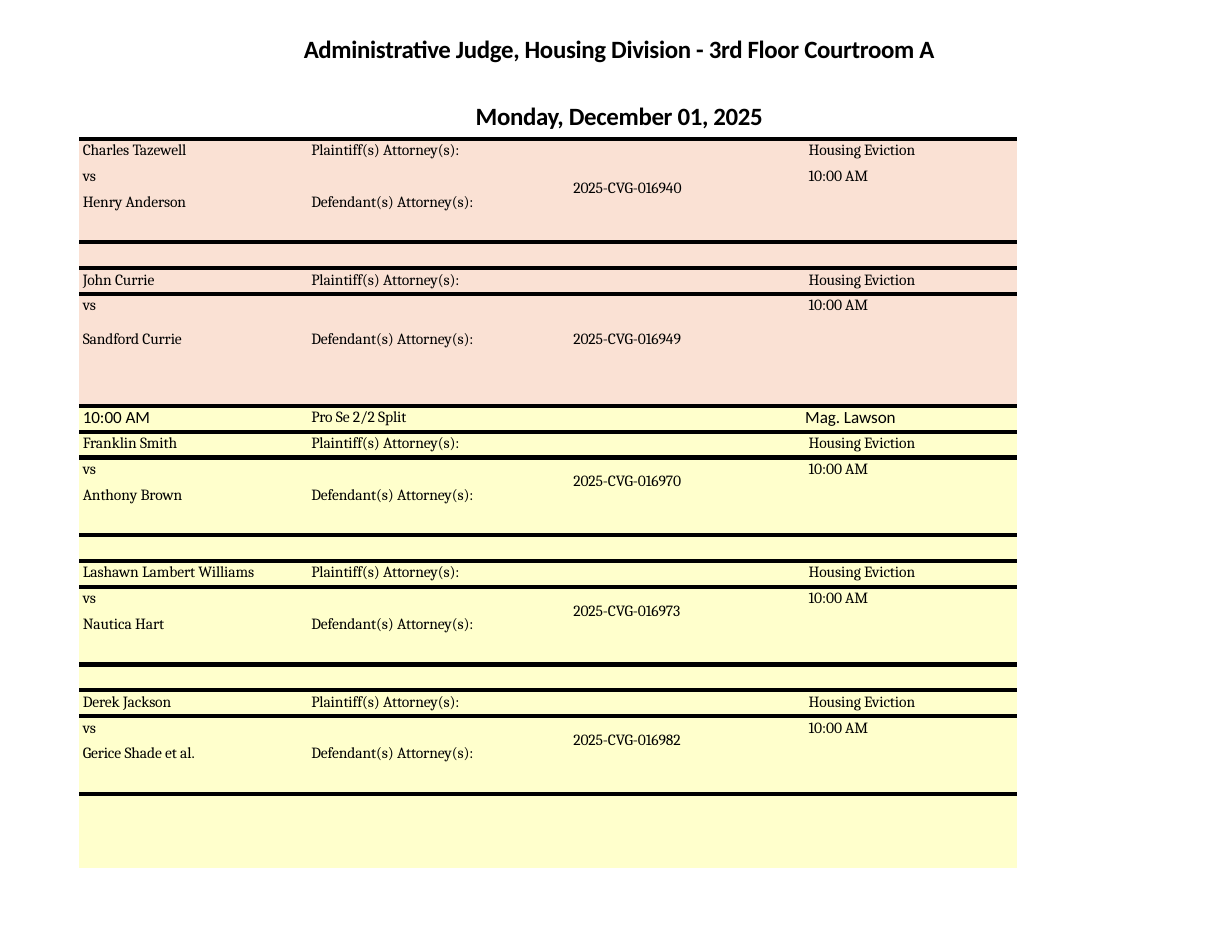
"""Build a one-page housing court docket with a heading and a case table."""
import pptx
import pptx.dml.color
import pptx.enum.text
import pptx.oxml.ns
import pptx.util
import lxml.etree

Pt = pptx.util.Pt
COLORS = {"ink": "000000", "morning": "FAE1D4", "pro se": "FFFFCC"}
HEADING = [("Administrative Judge, Housing Division - 3rd Floor Courtroom A", 0.9),
           ("Monday, December 01, 2025", 24)]
SESSION = ["10:00 AM", "Pro Se 2/2 Split", "", "Mag. Lawson"]
CASES = [
    ("morning", "Charles Tazewell", "Henry Anderson", "2025-CVG-016940", "spacer"),
    ("morning", "John Currie", "Sandford Currie", "2025-CVG-016949", "session"),
    ("pro se", "Franklin Smith", "Anthony Brown", "2025-CVG-016970", "spacer"),
    ("pro se", "Lashawn Lambert Williams", "Nautica Hart", "2025-CVG-016973", "spacer"),
    ("pro se", "Derek Jackson", "Gerice Shade et al.", "2025-CVG-016982", "footer"),
]
COLUMN_WIDTHS = [136.3, 154, 144.7, 167.6]
INDENTS = [2.2, 12.8, 27.3, 33.9]
LINE = 16.65
HEIGHTS = {"party": LINE, "versus": LINE, "defendant": 2 * LINE, "tall": 3 * LINE,
           "spacer": LINE, "session": LINE, "footer": 47.5}
RULES = {"opening": "T", "party": "TB", "versus": "", "defendant": "B", "tall": "B",
         "spacer": "TB", "session": "TB", "footer": ""}
HEIGHTS["opening"] = LINE
NO_GRID_STYLE = "{2D5ABB26-0587-4C30-8999-92F81FD0307C}"


def docket_rows():
    """Return (kind, fill name, texts) for each row of the table."""
    rows = []
    for fill, plaintiff, defendant, number, ending in CASES:
        tall = ending == "session"
        rows.append(("party" if rows else "opening", fill,
                     [plaintiff, "Plaintiff(s) Attorney(s):", "", "Housing Eviction"]))
        rows.append(("versus", fill, ["vs", "", "" if tall else number, "10:00 AM"]))
        rows.append(("tall" if tall else "defendant", fill,
                     [defendant, "Defendant(s) Attorney(s):", number if tall else "", ""]))
        rows.append((ending, "pro se" if tall else fill, SESSION if tall else [""] * 4))
    return rows


def color(name):
    return pptx.dml.color.RGBColor.from_string(COLORS[name])


def add_child(parent, tag, **attributes):
    return lxml.etree.SubElement(parent, pptx.oxml.ns.qn(tag), attributes)


def style_paragraph(paragraph, font_name, size, space_before, spacing, bold=False):
    font = paragraph.font
    font.name, font.size, font.bold = font_name, Pt(size), bold
    font.color.rgb = color("ink")
    font._rPr.set("spc", str(spacing))
    paragraph.space_before = Pt(space_before)


def add_heading(slide):
    box = slide.shapes.add_textbox(Pt(190.8), Pt(20.9), Pt(414.7), Pt(64.8))
    frame = box.text_frame
    frame.word_wrap = True
    frame.margin_left = frame.margin_right = frame.margin_bottom = 0
    frame.margin_top = Pt(0.9)
    for index, (text, space_before) in enumerate(HEADING):
        paragraph = frame.add_paragraph() if index else frame.paragraphs[0]
        paragraph.text = text
        paragraph.alignment = pptx.enum.text.PP_ALIGN.CENTER
        style_paragraph(paragraph, "Calibri", 16, space_before, -20, True)


def fill_cell(cell, kind, fill, text, column):
    for side in RULES[kind]:
        line = add_child(cell._tc.get_or_add_tcPr(), f"a:ln{side}", w=str(Pt(3)))
        add_child(add_child(line, "a:solidFill"), "a:srgbClr", val=COLORS["ink"])
    cell.fill.solid()
    cell.fill.fore_color.rgb = color(fill)
    paragraph = cell.text_frame.paragraphs[0]
    font_name, size, top, indent = "Cambria", 10, 1.8, INDENTS[column]
    if kind == "session" and column in (0, 3):
        font_name, size, top = "Calibri", 11, 0.6
        indent = 31.7 if column else indent
    elif kind == "versus" and column == 2:
        top = 9.7
    cell.margin_left = cell.margin_right = cell.margin_bottom = 0
    cell.margin_top = Pt(top)
    if text:
        paragraph.text = text
    style_paragraph(paragraph, font_name, size, top, -5)
    paragraph._p.get_or_add_pPr().set("marL", str(Pt(indent)))
    if not text:
        add_child(paragraph._p, "a:endParaRPr", sz=str(size * 100))


def add_docket(slide):
    rows = docket_rows()
    heights = [HEIGHTS[kind] for kind, _, _ in rows]
    frame = slide.shapes.add_table(len(rows), len(COLUMN_WIDTHS), Pt(51), Pt(89.3),
                                   Pt(sum(COLUMN_WIDTHS)), Pt(sum(heights)))
    table = frame.table
    table.first_row = table.horz_banding = False
    table._tbl.tblPr.find(pptx.oxml.ns.qn("a:tableStyleId")).text = NO_GRID_STYLE
    for column, width in zip(table.columns, COLUMN_WIDTHS):
        column.width = Pt(width)
    for index, (kind, fill, texts) in enumerate(rows):
        table.rows[index].height = Pt(heights[index])
        for column, text in enumerate(texts):
            fill_cell(table.cell(index, column), kind, fill, text, column)
    for index, (kind, _, texts) in enumerate(rows):
        if kind in ("spacer", "footer"):
            table.cell(index, 0).merge(table.cell(index, 3))
        elif kind == "versus" and texts[2]:
            origin = table.cell(index, 2)
            line = lxml.etree.Element(pptx.oxml.ns.qn("a:lnB"), w=str(Pt(3)))
            add_child(add_child(line, "a:solidFill"), "a:srgbClr", val=COLORS["ink"])
            origin._tc.get_or_add_tcPr().insert(0, line)
            origin.merge(table.cell(index + 1, 2))


def main():
    presentation = pptx.Presentation()
    presentation.slide_width, presentation.slide_height = Pt(792), Pt(612)
    slide = presentation.slides.add_slide(presentation.slide_layouts[6])
    add_heading(slide)
    add_docket(slide)
    presentation.save("out.pptx")


if __name__ == "__main__":
    main()
